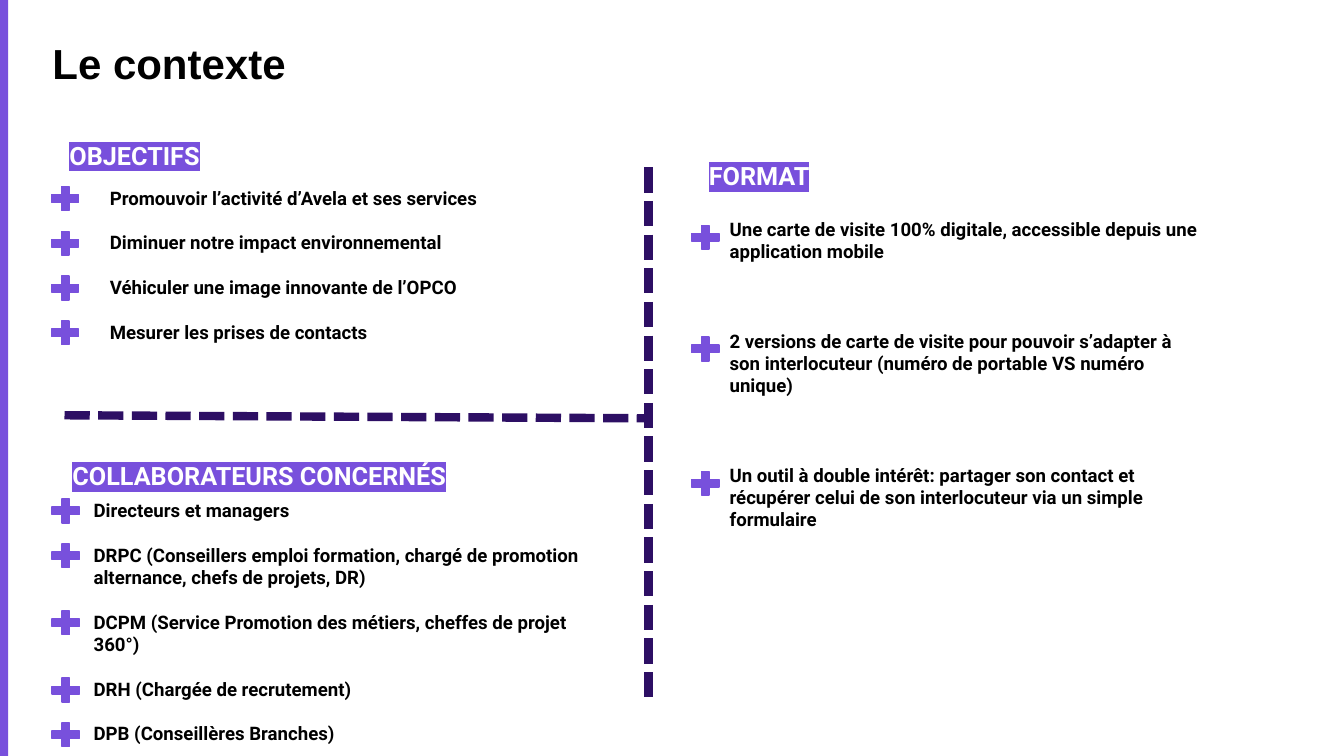
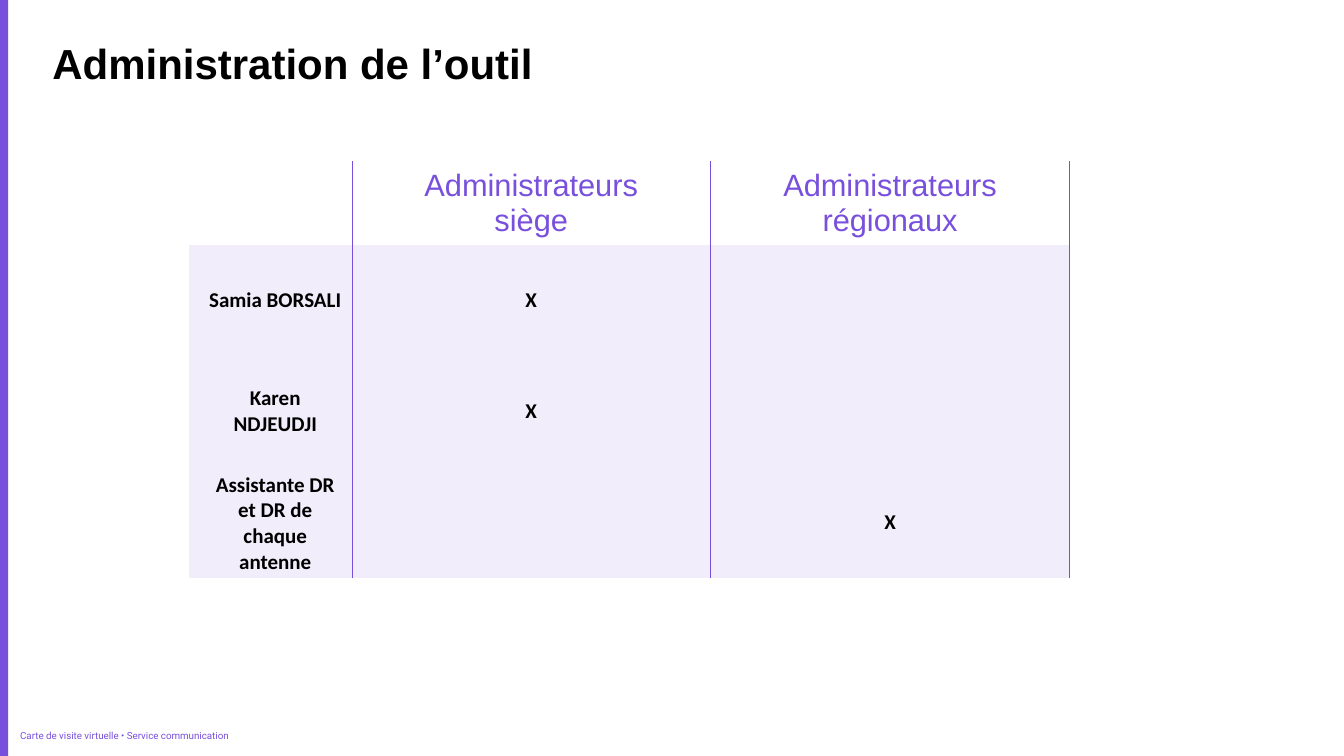
import pptx
import pptx.dml.color
import pptx.enum.dml
import pptx.enum.shapes
import pptx.enum.text
import pptx.oxml.ns
import pptx.oxml.xmlchemy
import pptx.util
from lxml import etree

WIDTH = pptx.util.Inches(13.33)
HEIGHT = pptx.util.Inches(7.5)
COLUMN = WIDTH / 100
ROW = HEIGHT / 100

VIOLET = "7850DC"
INDIGO = "2D0F64"
LILAC = "F1EDFB"
BLACK = "000000"
WHITE = "FFFFFF"

LINE_POINTS = 16
LINE_ROWS = 2.96  # one line of list text, in rows
PLUS_WIDTH, PLUS_HEIGHT = 2.78, 4.27
NO_STYLE = "{2D5ABB26-0587-4C30-8999-92F81FD0307C}"

MIDDLE = pptx.enum.text.MSO_ANCHOR.MIDDLE
CENTER = pptx.enum.text.PP_ALIGN.CENTER
SHAPES = pptx.enum.shapes.MSO_SHAPE

# Each list entry is a text and the number of lines it fills.
OBJECTIVES = [
    ("Promouvoir l’activité d’Avela et ses services", 1),
    ("Diminuer notre impact environnemental", 1),
    ("Véhiculer une image innovante de l’OPCO", 1),
    ("Mesurer les prises de contacts", 1),
]
STAFF = [
    ("Directeurs et managers", 1),
    ("DRPC (Conseillers emploi formation, chargé de promotion "
     "alternance, chefs de projets, DR)", 2),
    ("DCPM (Service Promotion des métiers, cheffes de projet 360°)", 2),
    ("DRH (Chargée de recrutement)", 1),
    ("DPB (Conseillères Branches)", 1),
]
FORMAT = [
    ("Une carte de visite 100% digitale, accessible depuis une "
     "application mobile", 2),
    ("2 versions de carte de visite pour pouvoir s’adapter à son "
     "interlocuteur (numéro de portable VS numéro unique)", 3),
    ("Un outil à double intérêt: partager son contact et récupérer celui "
     "de son interlocuteur via un simple formulaire", 3),
]
ADMINISTRATORS = [
    ["", "Administrateurs\nsiège", "Administrateurs régionaux"],
    ["Samia BORSALI", "X", ""],
    ["Karen NDJEUDJI", "X", ""],
    ["Assistante DR et DR de chaque antenne", "", "X"],
]


def color(value):
    return pptx.dml.color.RGBColor.from_string(value)


def across(columns):
    return round(columns * COLUMN)


def down(rows):
    return round(rows * ROW)


def grid(left, top, width, height):
    return across(left), down(top), across(width), down(height)


def add_run(paragraph, text, font, size, ink, bold=False, highlight=None):
    run = paragraph.add_run()
    run.text = text
    run.font.size = pptx.util.Pt(size)
    run.font.bold = bold
    run.font.color.rgb = color(ink)
    run.font.name = font
    if highlight:
        fill = run.font.fill._xPr.find(pptx.oxml.ns.qn("a:solidFill"))
        mark = etree.Element(pptx.oxml.ns.qn("a:highlight"))
        etree.SubElement(mark, pptx.oxml.ns.qn("a:srgbClr"), val=highlight)
        fill.addnext(mark)


def add_text_box(slide, area, margins=None):
    """Add an empty wrapping text box and return its text frame."""
    frame = slide.shapes.add_textbox(*grid(*area)).text_frame
    frame.word_wrap = True
    if margins:
        (frame.margin_left, frame.margin_top,
         frame.margin_right, frame.margin_bottom) = map(pptx.util.Inches, margins)
    return frame


def add_shape(slide, preset, area, fill, line_width=0):
    shape = slide.shapes.add_shape(preset, *grid(*area))
    shape.shadow.inherit = False
    shape.fill.solid()
    shape.fill.fore_color.rgb = color(fill)
    if line_width:
        shape.line.color.rgb = color(fill)
        shape.line.width = pptx.util.Pt(line_width)
    else:
        shape.line.fill.background()


def add_dashes(slide, start, end):
    connector = slide.shapes.add_connector(
        pptx.enum.shapes.MSO_CONNECTOR.STRAIGHT,
        across(start[0]), down(start[1]), across(end[0]), down(end[1]))
    connector.line.color.rgb = color(INDIGO)
    connector.line.width = pptx.util.Pt(6)
    connector.line.dash_style = pptx.enum.dml.MSO_LINE.SQUARE_DOT
    properties = connector.element.find(pptx.oxml.ns.qn("p:spPr"))
    etree.SubElement(properties, pptx.oxml.ns.qn("a:effectLst"))


def add_titled_slide(presentation, title):
    slide = presentation.slides.add_slide(presentation.slide_layouts[6])
    add_shape(slide, SHAPES.RECTANGLE, (0, 0, 0.6, 100), VIOLET)
    frame = add_text_box(slide, (3.9, 4.93, 73.74, 6.67), (0, 0, 0, 0))
    add_run(frame.paragraphs[0], title, "Arial", 30, BLACK, bold=True)
    return slide


def add_heading(slide, text, left, top, width):
    frame = add_text_box(slide, (left, top, width, 5.33))
    add_run(frame.paragraphs[0], text, "Roboto", 18, WHITE, True, VIOLET)


def add_plus_list(slide, items, left, top, width, plus_left, plus_drop=0.13, gap=1):
    """Stack items with `gap` lines between them and a plus beside each one."""
    total = sum(lines for _, lines in items) + gap * (len(items) - 1)
    frame = add_text_box(slide, (left, top, width, total * LINE_ROWS + 1.33))
    plus_top = top + plus_drop
    for index, (text, lines) in enumerate(items):
        paragraph = frame.add_paragraph() if index else frame.paragraphs[0]
        if index:
            paragraph.space_before = pptx.util.Pt(gap * LINE_POINTS)
        add_run(paragraph, text, "Roboto", 13.3, BLACK, bold=True)
        add_shape(slide, SHAPES.MATH_PLUS,
                  (plus_left, plus_top, PLUS_WIDTH, PLUS_HEIGHT), VIOLET, 1)
        plus_top += (lines + gap) * LINE_ROWS


def add_right_border(cell):
    line = etree.Element(pptx.oxml.ns.qn("a:lnR"), w=str(pptx.util.Pt(0.5)))
    fill = etree.SubElement(line, pptx.oxml.ns.qn("a:solidFill"))
    etree.SubElement(fill, pptx.oxml.ns.qn("a:srgbClr"), val=VIOLET)
    cell._tc.get_or_add_tcPr().insert(0, line)


def fill_cell(cell, text, is_header, is_name):
    cell.vertical_anchor = MIDDLE
    if is_header:
        cell.fill.background()
        style = ("Arial", 22, VIOLET)
    else:
        cell.fill.solid()
        cell.fill.fore_color.rgb = color(LILAC)
        cell.margin_left = pptx.util.Inches(0.2)
        cell.margin_right = pptx.util.Inches(0.1 if is_name else 0.2)
        style = ("Calibri", 15, BLACK, True)
    add_right_border(cell)
    paragraph = cell.text_frame.paragraphs[0]
    paragraph.alignment = CENTER
    for index, line in enumerate(text.split("\n") if text else []):
        if index:
            paragraph.add_line_break()
        add_run(paragraph, line, *style)


def add_grid_table(slide, rows, left, top, widths, heights):
    graphic = slide.shapes.add_table(
        len(rows), len(widths), *grid(left, top, sum(widths), sum(heights)))
    table = graphic.table
    table.first_row = table.horz_banding = False
    for style in graphic.element.iter(pptx.oxml.ns.qn("a:tableStyleId")):
        style.text = NO_STYLE
    for column, width in zip(table.columns, widths):
        column.width = across(width)
    for row, height in zip(table.rows, heights):
        row.height = down(height)
    for row_index, row in enumerate(rows):
        for column_index, text in enumerate(row):
            fill_cell(table.cell(row_index, column_index), text,
                      row_index == 0, column_index == 0)


def add_footer(slide, text):
    frame = add_text_box(slide, (0, 95.07, 33.75, 4.4), (0.2, 0, 0, 0))
    frame.vertical_anchor = MIDDLE
    add_run(frame.paragraphs[0], text, "Roboto", 7, VIOLET)


def build_context(presentation):
    slide = add_titled_slide(presentation, "Le contexte")
    add_dashes(slide, (48.24, 22.13), (48.24, 92.4))
    add_dashes(slide, (4.8, 54.93), (48.24, 55.33))
    add_heading(slide, "OBJECTIFS", 4.43, 17.87, 13)
    add_plus_list(slide, OBJECTIVES, 7.43, 24, 36.1, 3.45)
    add_heading(slide, "COLLABORATEURS CONCERNÉS", 4.65, 60.27, 33.75)
    add_plus_list(slide, STAFF, 6.23, 65.33, 38.55, 3.5)
    add_heading(slide, "FORMAT", 52, 20.53, 12)
    add_plus_list(slide, FORMAT, 53.55, 28.13, 36.7, 51.08, plus_drop=1.1, gap=3)


def build_administration(presentation):
    slide = add_titled_slide(presentation, "Administration de l’outil")
    add_grid_table(slide, ADMINISTRATORS, 14.03, 21.33,
                   [12.15, 26.7, 26.7], [11.07] + [14.67] * 3)
    add_footer(slide, "Carte de visite virtuelle • Service communication")


def main():
    presentation = pptx.Presentation()
    presentation.slide_width = WIDTH
    presentation.slide_height = HEIGHT
    build_context(presentation)
    build_administration(presentation)
    presentation.save("out.pptx")


if __name__ == "__main__":
    main()
